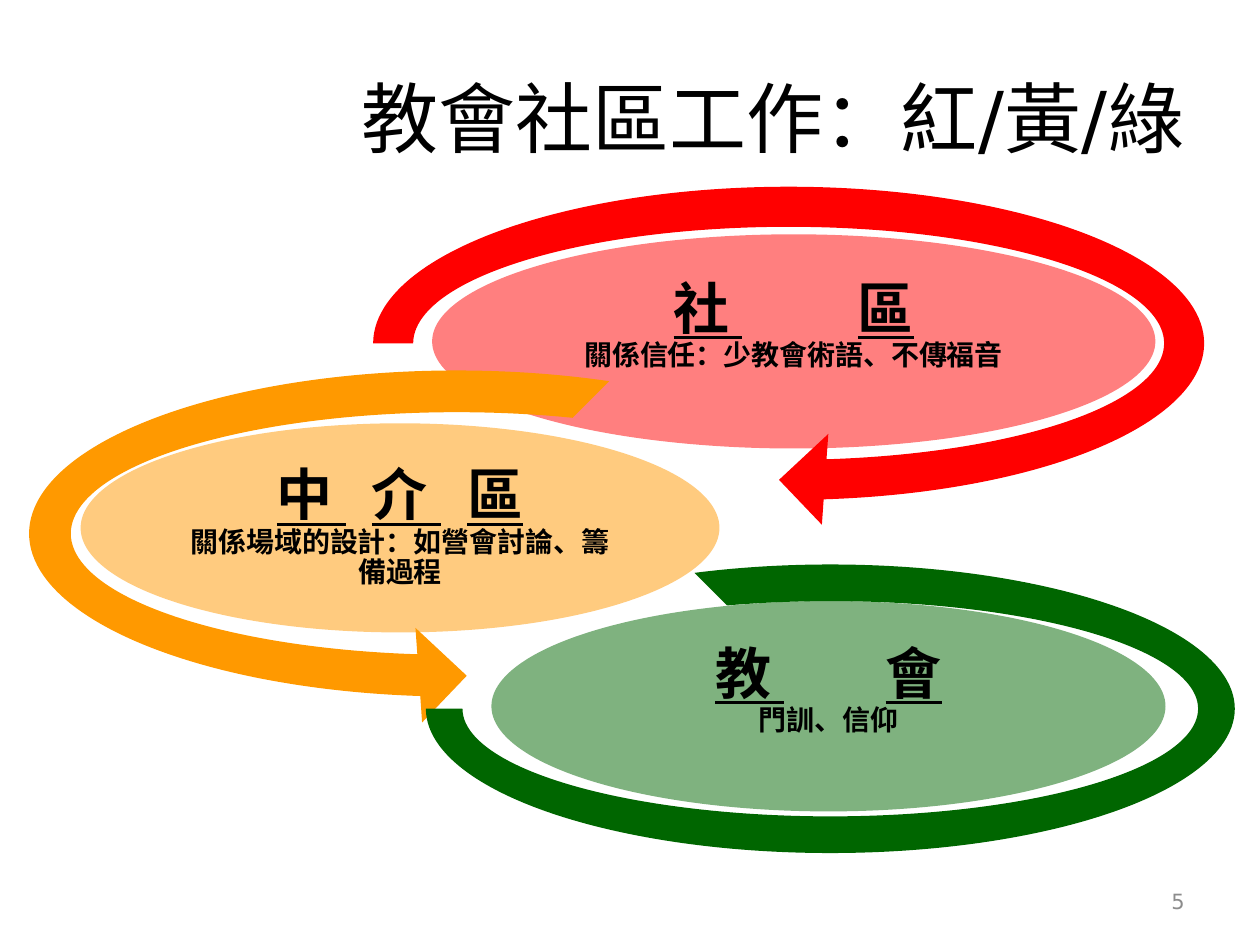
from math import sqrt

from lxml.etree import SubElement
from pptx import Presentation
from pptx.dml.color import RGBColor
from pptx.enum.shapes import MSO_SHAPE
from pptx.enum.text import MSO_ANCHOR, PP_ALIGN
from pptx.oxml.ns import qn
from pptx.util import Inches, Pt

COLORS = {
    "community": "FF0000",
    "bridge": "FF9900",
    "church": "006600",
    "text": "000000",
    "number": "8C8C8C",
}
FONT = "DejaVu Sans"
CELL = 0.1  # the slide is a grid of 100 columns by 75 rows
INSCRIBED = (1 - 1 / sqrt(2)) / 2  # margin of the text area inside an ellipse

# Each zone: arrow shape with its box and adjustments, ellipse box,
# heading characters, gap between them in points, description, bottom inset
ZONES = [
    ("community", MSO_SHAPE.CIRCULAR_ARROW, (27.6, 12.8, 70, 28.9),
     (0.11, 11.42, 45, 108, 0.125), (34.3, 18.6, 57.4, 17),
     "社區", 66, "關係信任：少教會術語、不傳福音", 2.6),
    ("bridge", MSO_SHAPE.LEFT_CIRCULAR_ARROW, (0.2, 27.3, 72.1, 30.1),
     (0.11, 11.42, 63, 189, 0.125), (6.4, 33.6, 50.7, 16.6),
     "中介區", 15, "關係場域的設計：如營會討論、籌備過程", 0.2),
    ("church", MSO_SHAPE.BLOCK_ARC, (33.8, 44.8, 64.2, 22.9),
     (135, 108, 0.127), (39, 47.7, 53.5, 16.7),
     "教會", 58, "門訓、信仰", 2.6),
]


def grid(*cells):
    return [Inches(cell * CELL) for cell in cells]


def add_run(paragraph, text, size, color="text", bold=None, underline=None):
    run = paragraph.add_run()
    run.text = text
    font = run.font
    font.name, font.size = FONT, Pt(size)
    font.bold, font.underline = bold, underline
    font.color.rgb = RGBColor.from_string(COLORS[color])
    return run


def add_filled(slide, preset, box, color, opacity=None):
    filled = slide.shapes.add_shape(preset, *grid(*box))
    filled.shadow.inherit = False
    filled.fill.solid()
    filled.fill.fore_color.rgb = RGBColor.from_string(COLORS[color])
    filled.line.fill.background()
    if opacity is not None:
        hue = filled._element.spPr.find(".//" + qn("a:srgbClr"))
        SubElement(hue, qn("a:alpha"), val=str(opacity * 1000))
    return filled


def add_text_frame(slide, box):
    frame = slide.shapes.add_textbox(*grid(*box)).text_frame
    frame.word_wrap = True
    frame.vertical_anchor = MSO_ANCHOR.MIDDLE
    return frame


def add_heading(paragraph, characters, gap):
    """Underlined heading whose single spaces are widened by tracking."""
    for index, character in enumerate(characters):
        if index:
            space = add_run(paragraph, " ", 32, bold=True, underline=True)
            space.font._element.set("spc", str(gap * 100))
        add_run(paragraph, character, 32, bold=True, underline=True)


def add_zone(slide, color, preset, arrow_box, adjustments, ellipse_box,
             heading, gap, description, bottom):
    # Arrow around the zone
    arrow = add_filled(slide, preset, arrow_box, color)
    for index, value in enumerate(adjustments):
        arrow.adjustments[index] = value

    # Half transparent ellipse
    add_filled(slide, MSO_SHAPE.OVAL, ellipse_box, color, opacity=50)

    # Text in the rectangle inscribed in the ellipse
    left, top, width, height = ellipse_box
    frame = add_text_frame(slide, (
        left + width * INSCRIBED, top + height * INSCRIBED,
        width / sqrt(2), height / sqrt(2)))
    frame.margin_left = frame.margin_right = frame.margin_top = Inches(0.02)
    frame.margin_bottom = Inches(bottom * CELL)
    title_line, detail_line = frame.paragraphs[0], frame.add_paragraph()
    for line in (title_line, detail_line):
        line.alignment = PP_ALIGN.CENTER
        line.line_spacing = 0.9
    add_heading(title_line, heading, gap)
    add_run(detail_line, description, 16, bold=True)


def add_title(slide, text):
    title = slide.shapes.title
    title.left, title.top, title.width, title.height = grid(5, 3, 90, 12.5)
    title.text_frame.vertical_anchor = MSO_ANCHOR.MIDDLE
    line = title.text_frame.paragraphs[0]
    line.alignment = PP_ALIGN.RIGHT
    add_run(line, text, 44)


def add_page_number(slide, number):
    line = add_text_frame(slide, (71.7, 69.5, 23.3, 4)).paragraphs[0]
    line.alignment = PP_ALIGN.RIGHT
    add_run(line, number, 12, "number")


def main():
    deck = Presentation()
    deck.slide_width, deck.slide_height = grid(100, 75)
    slide = deck.slides.add_slide(deck.slide_layouts[5])
    add_title(slide, "教會社區工作：紅/黃/綠")
    for zone in ZONES:
        add_zone(slide, *zone)
    add_page_number(slide, "5")
    deck.save("out.pptx")


if __name__ == "__main__":
    main()
